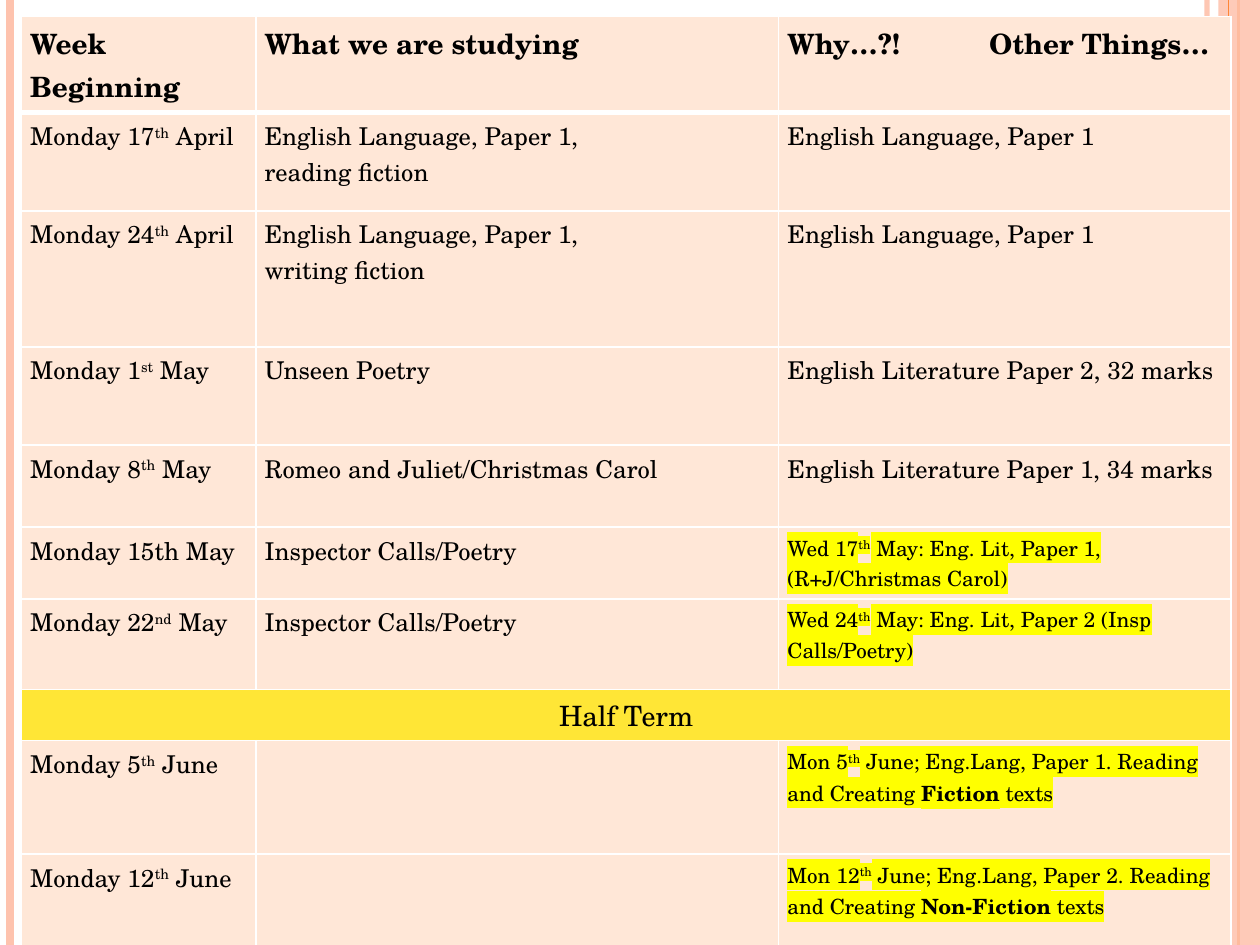
from dataclasses import dataclass, replace

from lxml.etree import SubElement
from pptx import Presentation
from pptx.dml.color import RGBColor
from pptx.enum.shapes import MSO_CONNECTOR, MSO_SHAPE
from pptx.enum.text import PP_ALIGN
from pptx.oxml.ns import qn
from pptx.util import Inches, Pt

HUES = {"peach": "FEC3AE", "orange": "FE8637", "cell": "FFE7D7", "band": "FFE636",
        "mark": "FFFF00", "white": "FFFFFF", "black": "000000"}
FONT = "TeX Gyre Schola"
WIDE, HIGH = Inches(10), Inches(7.5)


@dataclass(frozen=True)
class Run:
    text: str
    size: int = 14
    bold: bool = False
    raised: bool = False
    mark: bool = False


@dataclass(frozen=True)
class Stripe:
    x: float
    width: float
    hue: str
    alpha: int = 100


Para = list[Run]
Cell = list[Para]


@dataclass(frozen=True)
class Row:
    height: float
    cells: list[Cell]
    hue: str = "cell"


def across(share: float) -> int:
    """Percent of the slide's width."""
    return round(WIDE * share / 100)


def down(share: float) -> int:
    """Percent of the slide's height."""
    return round(HIGH * share / 100)


def plain(*lines: str) -> Cell:
    return [[Run(line)] for line in lines]


def head(text: str) -> Cell:
    return [[Run(text, 16, True)]]


def date(start: str, suffix: str, rest: str) -> Cell:
    return [[Run(start), Run(suffix, raised=True), Run(rest)]]


def exam(start: str, rest: str, genre: str = "") -> Cell:
    """Highlighted exam date, with an optional bold genre before "texts"."""
    runs = date(start, "th", rest)[0]
    if genre:
        runs += [Run(genre, bold=True), Run(" texts")]
    return [[replace(run, size=12, mark=True) for run in runs]]


STRIPES = [
    Stripe(95.8, 3, "peach", 93),
    Stripe(0.8, 4.5, "peach"),
    Stripe(98.3, 1.5, "orange"),
    Stripe(97.5, 0.75, "orange"),
]
COLS = [18.6, 41.5, 35.9]
ROWS = [
    Row(10, [head("Week Beginning"), head("What we are studying"),
             head("Why…?!\tOther Things…")]),
    Row(10.4, [date("Monday 17", "th", " April"),
               plain("English Language, Paper 1,", "reading fiction"),
               plain("English Language, Paper 1")]),
    Row(14.4, [date("Monday 24", "th", " April"),
               plain("English Language, Paper 1,", "writing fiction"),
               plain("English Language, Paper 1")]),
    Row(10.4, [date("Monday 1", "st", " May"), plain("Unseen Poetry"),
               plain("English Literature Paper 2, 32 marks")]),
    Row(8.67, [date("Monday 8", "th", " May"),
               plain("Romeo and Juliet/Christmas Carol"),
               plain("English Literature Paper 1, 34 marks")]),
    Row(7.47, [plain("Monday 15th May"), plain("Inspector Calls/Poetry"),
               exam("Wed 17", " May: Eng. Lit, Paper 1, (R+J/Christmas Carol)")]),
    Row(9.6, [date("Monday 22", "nd", " May"), plain("Inspector Calls/Poetry"),
              exam("Wed 24", " May: Eng. Lit, Paper 2 (Insp Calls/Poetry)")]),
    Row(5.33, [[[Run("Half Term", 16)]]], "band"),
    Row(12, [date("Monday 5", "th", " June"), [],
             exam("Mon 5", " June; Eng.Lang, Paper 1. Reading and Creating ", "Fiction")]),
    Row(11.2, [date("Monday 12", "th", " June"), [],
               exam("Mon 12", " June; Eng.Lang, Paper 2. Reading and Creating ",
                    "Non-Fiction")]),
]


def paint(fill, hue: str) -> None:
    fill.solid()
    fill.fore_color.rgb = RGBColor.from_string(HUES[hue])


def fade(props, alpha: int) -> None:
    """Set the opacity, in percent, of the first colour in props."""
    tint = next(props.iter(qn("a:srgbClr")))
    SubElement(tint, qn("a:alpha"), val=str(alpha * 1000))


def draw_stripe(slide, stripe: Stripe) -> None:
    x = across(stripe.x)
    line = slide.shapes.add_connector(MSO_CONNECTOR.STRAIGHT, x, 0, x, HIGH)
    line.line.width = Pt(stripe.width)
    paint(line.line.fill, stripe.hue)
    props = line._element.spPr
    if stripe.alpha < 100:
        fade(props, stripe.alpha)
    SubElement(props, qn("a:effectLst"))


def draw_band(slide) -> None:
    left = across(96.7)
    band = slide.shapes.add_shape(MSO_SHAPE.RECTANGLE, left, 0, WIDE - left, HIGH)
    band.shadow.inherit = False
    paint(band.fill, "peach")
    fade(band._element.spPr, 87)
    band.line.fill.background()


def add_run(para, item: Run) -> None:
    run = para.add_run()
    run.text = item.text
    font = run.font
    font.size, font.bold, font.name = Pt(item.size), item.bold, FONT
    paint(font.fill, "black")
    props = run._r.get_or_add_rPr()
    if item.raised:
        props.set("baseline", "30000")
    if item.mark:
        mark = SubElement(props, qn("a:highlight"))
        SubElement(mark, qn("a:srgbClr"), val=HUES["mark"])
        props.find(qn("a:solidFill")).addnext(mark)


def add_tab(para, place: int) -> None:
    tabs = SubElement(para._p.get_or_add_pPr(), qn("a:tabLst"))
    SubElement(tabs, qn("a:tab"), pos=str(place), algn="l")


def edge(cell, row: int) -> None:
    """White borders, thicker below the head row."""
    props = cell._tc.get_or_add_tcPr()
    for side in "LRTB":
        thick = (row, side) in ((0, "B"), (1, "T"))
        line = SubElement(props, qn(f"a:ln{side}"), w=str(Pt(3 if thick else 1)))
        fill = SubElement(line, qn("a:solidFill"))
        SubElement(fill, qn("a:srgbClr"), val=HUES["white"])


def write(cell, paras: Cell) -> None:
    frame = cell.text_frame
    for i, runs in enumerate(paras):
        para = frame.add_paragraph() if i else frame.paragraphs[0]
        if any("\t" in run.text for run in runs):
            add_tab(para, across(16))
        for run in runs:
            add_run(para, run)


def draw_table(slide) -> None:
    table = slide.shapes.add_table(
        len(ROWS), len(COLS), across(1.7), down(1.73), across(sum(COLS)),
        down(sum(row.height for row in ROWS))).table
    table.first_row = table.horz_banding = False
    for col, width in zip(table.columns, COLS):
        col.width = across(width)
    for r, row in enumerate(ROWS):
        table.rows[r].height = down(row.height)
        for cell in table.rows[r].cells:
            cell.margin_left = cell.margin_right = Inches(0.07)
            cell.margin_top = cell.margin_bottom = Inches(0.04)
            edge(cell, r)
            paint(cell.fill, row.hue)
        for c, paras in enumerate(row.cells):
            write(table.cell(r, c), paras)
        if len(row.cells) == 1:
            first = table.cell(r, 0)
            first.merge(table.cell(r, len(COLS) - 1))
            first.text_frame.paragraphs[0].alignment = PP_ALIGN.CENTER


def main() -> None:
    deck = Presentation()
    deck.slide_width, deck.slide_height = WIDE, HIGH
    slide = deck.slides.add_slide(deck.slide_layouts[6])
    for stripe in STRIPES[:-1]:
        draw_stripe(slide, stripe)
    draw_band(slide)
    draw_stripe(slide, STRIPES[-1])
    draw_table(slide)
    deck.save("out.pptx")


if __name__ == "__main__":
    main()
